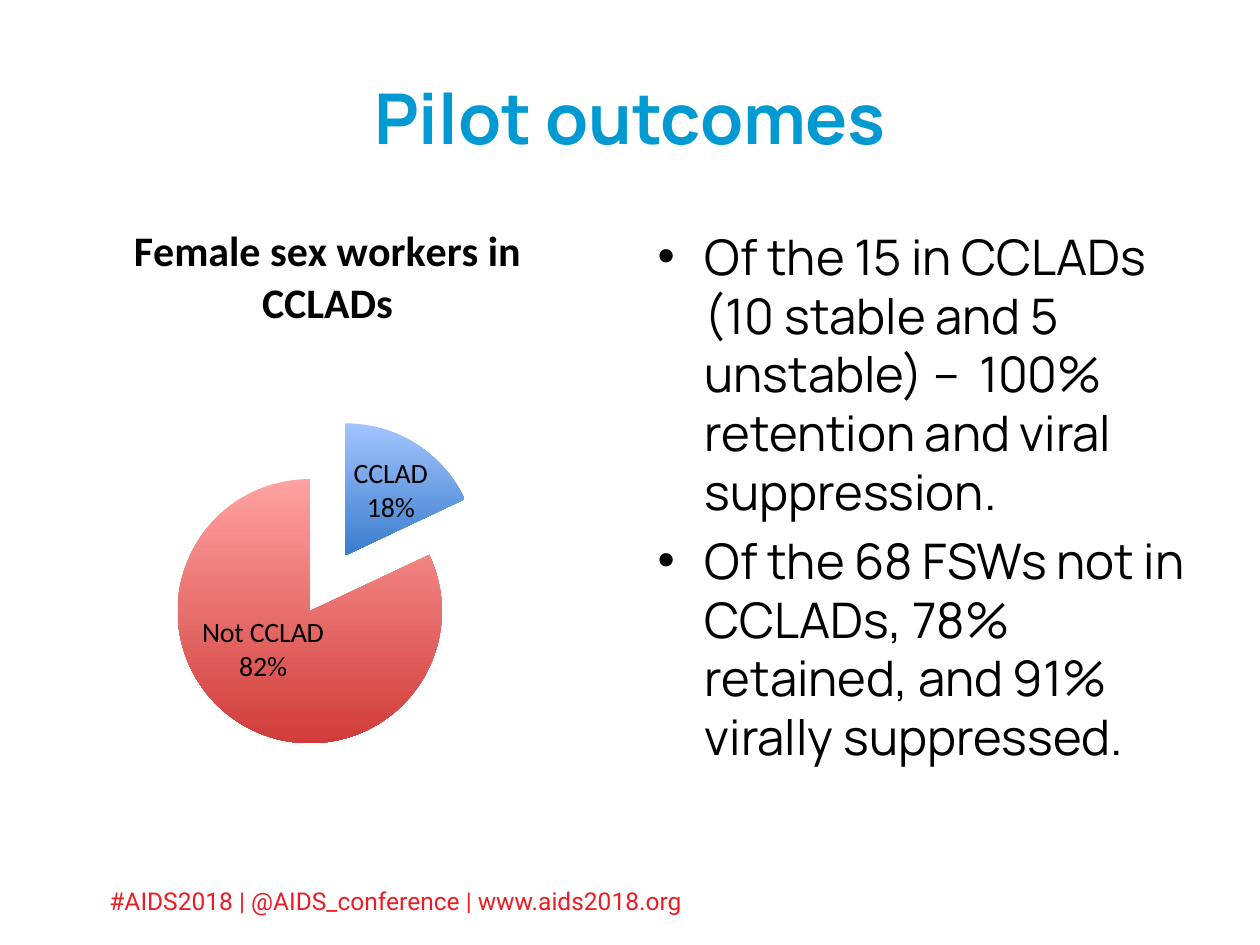
from lxml import etree
from pptx import Presentation
from pptx import util as u
from pptx.chart.data import CategoryChartData
from pptx.dml.color import RGBColor
from pptx.enum import chart as charts, text
from pptx.oxml.ns import qn

PX = 914400 / 126
COLOURS = {
    "title": "0099D2", "text": "000000", "footer": "ED1C24",
    "blue_light": "A3C4FF", "blue_dark": "3A7CCB",
    "red_light": "FFA2A1", "red_dark": "D03C39",
}


def px(*lengths):
    return [u.Emu(round(length * PX)) for length in lengths]


class OutcomeSlide:
    heading_font, footer_font, chart_font = "Manrope", "Roboto", "Calibri"

    def __init__(self, deck):
        self.slide = deck.slides.add_slide(deck.slide_layouts[1])

    def style(self, font, name, size, colour, bold=False):
        font.name, font.size, font.bold = name, u.Pt(size), bold
        font.color.rgb = RGBColor.from_string(COLOURS[colour])

    def place(self, shape, box):
        shape.left, shape.top, shape.width, shape.height = px(*box)

    def add_run(self, paragraph, wording, *look):
        run = paragraph.add_run()
        run.text = wording
        self.style(run.font, *look)

    def title(self, box, wording):
        heading = self.slide.shapes.title
        self.place(heading, box)
        heading.text_frame.vertical_anchor = text.MSO_ANCHOR.MIDDLE
        line = heading.text_frame.paragraphs[0]
        line.alignment = text.PP_ALIGN.CENTER
        self.add_run(line, wording, self.heading_font, 40, "title", True)

    def bullets(self, box, findings):
        body = self.slide.placeholders[1]
        self.place(body, box)
        frame = body.text_frame
        frame.auto_size = text.MSO_AUTO_SIZE.NONE
        for i, finding in enumerate(findings):
            item = frame.add_paragraph() if i else frame.paragraphs[0]
            self.add_run(item, finding, self.heading_font, 28, "text")

    def footer(self, box, wording):
        frame = self.slide.shapes.add_textbox(*px(*box)).text_frame
        frame.word_wrap = True
        self.add_run(frame.paragraphs[0], wording, self.footer_font, 14, "footer")

    def pie(self, box, heading, shares, hues, plot):
        data = CategoryChartData()
        data.categories = list(shares)
        data.add_series("Series 1", list(shares.values()))
        pie = self.slide.shapes.add_chart(
            charts.XL_CHART_TYPE.PIE, *px(*box), data).chart
        pie.has_legend = False
        self.style(pie.font, self.chart_font, 10, "text")
        pie.has_title = True
        self.add_run(pie.chart_title.text_frame.paragraphs[0], heading,
                     self.chart_font, 24, "text", True)
        pie.chart_title.include_in_layout = False

        # Slices, shaded from top to bottom and pulled apart
        pie.plots[0].vary_by_categories = True
        series = pie.plots[0].series[0]
        for i, hue in enumerate(hues):
            fill = series.points[i].format.fill
            fill.gradient()
            fill.gradient_angle = 270
            for stop, tone in zip(fill.gradient_stops, ("light", "dark")):
                stop.color.rgb = RGBColor.from_string(COLOURS[f"{hue}_{tone}"])
        explosion = etree.Element(qn("c:explosion"), val="25")
        series._element.find(qn("c:dPt")).addprevious(explosion)

        # Category and percentage on each slice
        labels = series.data_labels
        labels.show_value = False
        labels.show_category_name = labels.show_percentage = True
        labels.number_format, labels.number_format_is_linked = "0%", False
        labels.position = charts.XL_LABEL_POSITION.BEST_FIT
        self.style(labels.font, self.chart_font, 16, "text")
        separator = etree.Element(qn("c:separator"))
        separator.text = "\n"
        labels._element.find(qn("c:showBubbleSize")).addnext(separator)

        # Fixed plot area below the heading
        area = pie._chartSpace.chart.plotArea
        for old in area.findall(qn("c:layout")):
            area.remove(old)
        layout = etree.Element(qn("c:layout"))
        area.insert(0, layout)
        manual = etree.SubElement(layout, qn("c:manualLayout"))
        settings = {"layoutTarget": "inner", "xMode": "edge", "yMode": "edge",
                    **dict(zip("xywh", plot))}
        for tag, value in settings.items():
            etree.SubElement(manual, qn(f"c:{tag}"), val=str(value))


def main():
    deck = Presentation()
    deck.slide_width, deck.slide_height = u.Inches(10), u.Inches(7.5)
    outcomes = OutcomeSlide(deck)
    outcomes.footer((97, 880, 963, 43),
                    "#AIDS2018 | @AIDS_conference | www.aids2018.org")
    outcomes.title((58, 38, 1144, 158), "Pilot outcomes")
    outcomes.bullets((645, 220, 557, 624), [
        "Of the 15 in CCLADs (10 stable and 5 unstable) –  100% retention "
        "and viral suppression.",
        "Of the 68 FSWs not in CCLADs, 78% retained, and 91% virally suppressed.",
    ])
    outcomes.pie((10, 195, 635, 664), "Female sex workers in CCLADs",
                 {"CCLAD": 18, "Not CCLAD": 82}, ("blue", "red"),
                 plot=(0.24, 0.33, 0.52, 0.51))
    deck.save("out.pptx")


if __name__ == "__main__":
    main()
